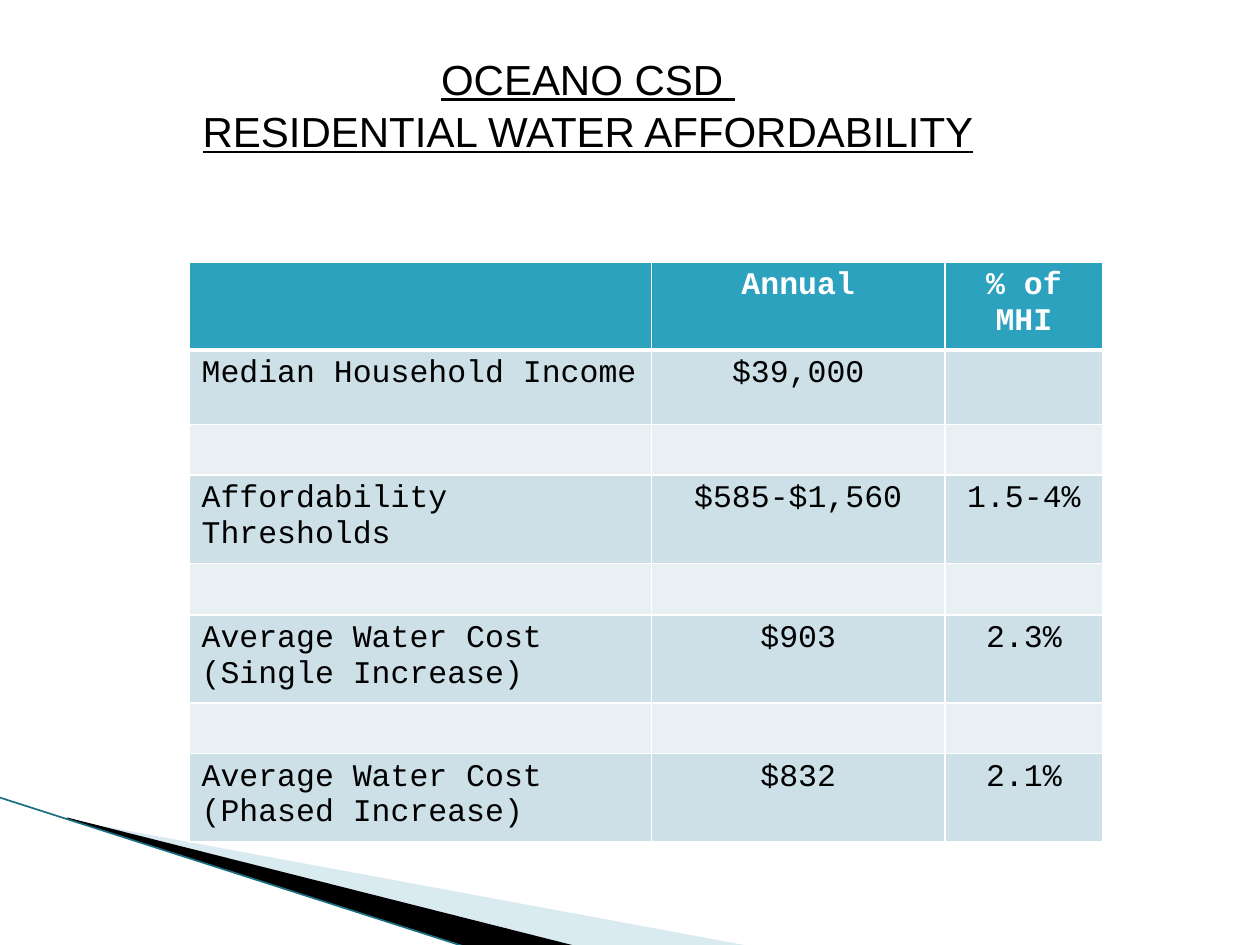
from lxml import etree
from pptx import Presentation
from pptx import util as u
from pptx.dml.color import RGBColor
from pptx.enum import shapes, text
from pptx.oxml.ns import qn

COLS = [9.32, 5.92, 3.18]
ROWS = [1.5, 1.5, 0.81, 1.5, 1.04, 1.5, 0.97, 1.5]
COSTS = [
    ("", "Annual", "% of MHI"),
    ("Median Household Income", "$39,000", ""),
    ("", "", ""),
    ("Affordability Thresholds", "$585-$1,560", "1.5-4%"),
    ("", "", ""),
    ("Average Water Cost\n(Single Increase)", "$903", "2.3%"),
    ("", "", ""),
    ("Average Water Cost (Phased Increase)", "$832", "2.1%"),
]


def paint(thing, color):
    thing.solid()
    thing.fore_color.rgb = RGBColor.from_string(color)


def style(par, font, size, color, bold=False, line=False):
    for run in par.runs:
        run.font.name = font
        run.font.size = u.Pt(size)
        run.font.bold = bold
        run.font.underline = line
        run.font.color.rgb = RGBColor.from_string(color)


def wedge(slide, points, color, alpha=None):
    """Draw a filled polygon; points in cm, alpha in percent."""
    spots = [(u.Cm(x), u.Cm(y)) for x, y in points]
    pen = slide.shapes.build_freeform(*spots[0])
    pen.add_line_segments(spots[1:])
    shape = pen.convert_to_shape()
    shape.shadow.inherit = False
    shape.line.fill.background()
    paint(shape.fill, color)
    if alpha:
        tone = shape.fill._xPr.find(qn("a:solidFill"))[0]
        etree.SubElement(tone, qn("a:alpha")).set("val", str(alpha * 1000))


def stroke(slide, start, end, color, width):
    ends = [u.Cm(n) for n in start + end]
    line = slide.shapes.add_connector(shapes.MSO_CONNECTOR.STRAIGHT, *ends)
    line.line.width = u.Pt(width)
    paint(line.line.fill, color)
    etree.SubElement(line._element.spPr, qn("a:effectLst"))


def title(slide, lines):
    box = slide.shapes.add_textbox(u.Cm(0.64), u.Cm(0.84), u.Cm(22.43), u.Cm(4.88))
    frame = box.text_frame
    frame.word_wrap = True
    frame.margin_top = u.Cm(0.23)
    frame.text = "\n".join(lines)
    for i, par in enumerate(frame.paragraphs):
        par.alignment = text.PP_ALIGN.CENTER
        if i:
            par.space_before = u.Pt(1)
        style(par, "Arial", 24, "000000", line=True)


def border(cell, base):
    """Give a cell white borders, with the given bottom width in points."""
    props = cell._tc.get_or_add_tcPr()
    for i, (side, width) in enumerate([("L", 1), ("R", 1), ("T", 1), ("B", base)]):
        edge = etree.Element(qn("a:ln" + side), w=str(u.Pt(width)))
        fill = etree.SubElement(edge, qn("a:solidFill"))
        etree.SubElement(fill, qn("a:srgbClr"), val="FFFFFF")
        props.insert(i, edge)


def grid(slide, data):
    frame = slide.shapes.add_table(len(ROWS), len(COLS), u.Cm(3.81), u.Cm(5.28),
                                   u.Cm(sum(COLS)), u.Cm(sum(ROWS)))
    table = frame.table
    for col, width in zip(table.columns, COLS):
        col.width = u.Cm(width)
    for r, (row, high) in enumerate(zip(table.rows, ROWS)):
        row.height = u.Cm(high)
        head = r == 0
        back = "2DA2BF" if head else ("CDE0E8" if r % 2 else "E8F0F4")
        for c, cell in enumerate(row.cells):
            cell.text_frame.text = data[r][c]
            paint(cell.fill, back)
            border(cell, 3 if head else 1)
            for par in cell.text_frame.paragraphs:
                if c:
                    par.alignment = text.PP_ALIGN.CENTER
                style(par, "Courier New", 18, "FFFFFF" if head else "000000", head)


def main():
    deck = Presentation()
    deck.slide_width, deck.slide_height = u.Cm(25.4), u.Cm(19.05)
    slide = deck.slides.add_slide(deck.slide_layouts[6])
    wedge(slide, [(1.4, 16.53), (15.11, 19.07), (11.58, 19.07), (1.4, 16.51)],
          "A0CBDC", 40)
    wedge(slide, [(1.35, 16.48), (11.61, 19.07), (9.45, 19.1), (1.37, 16.51)],
          "000000")
    stroke(slide, (0, 16.08), (9.42, 19.1), "1A6E84", 0.95)
    title(slide, ["OCEANO CSD ", "RESIDENTIAL WATER AFFORDABILITY"])
    grid(slide, COSTS)
    deck.save("out.pptx")


if __name__ == "__main__":
    main()
